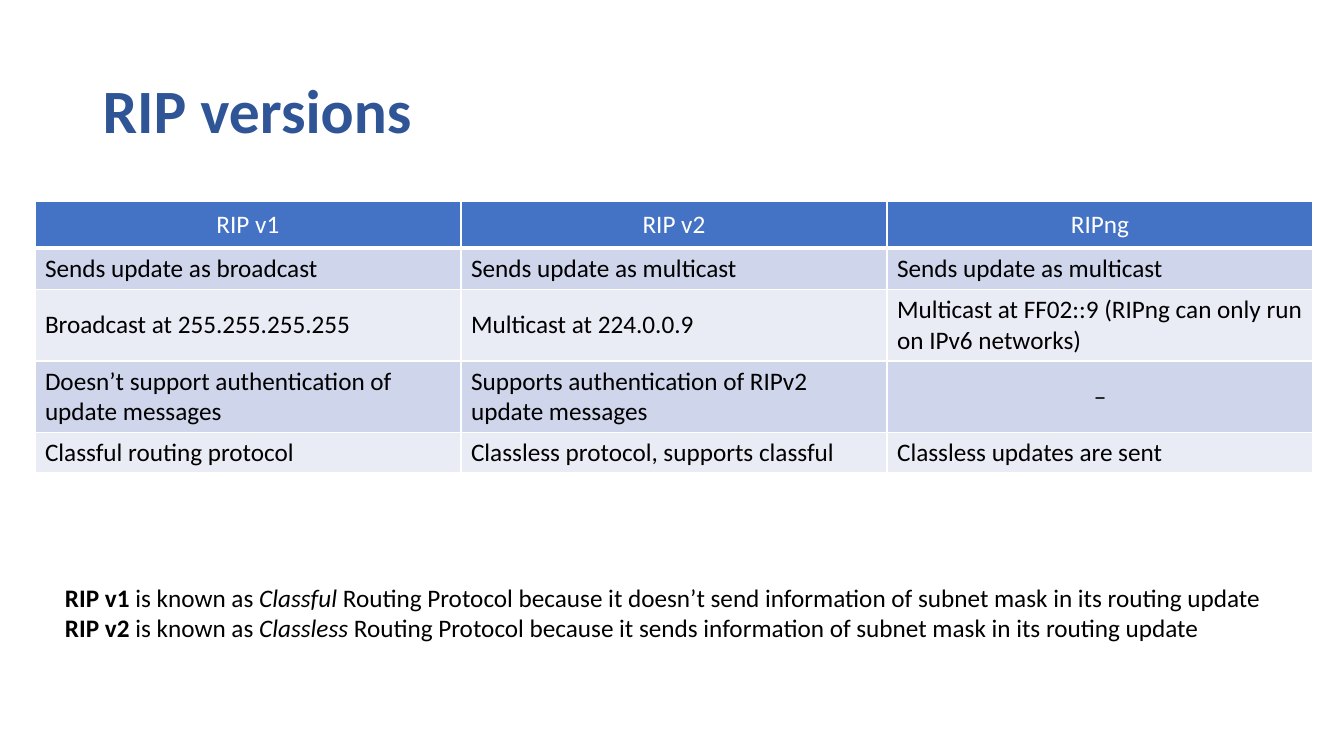
import pptx
import pptx.dml.color
import pptx.enum.text
import pptx.oxml.ns
import pptx.util
from lxml import etree

WIDTH, HEIGHT = 13.33, 7.5
FONT = "Calibri"
COLORS = {
    "title": "2F5597",
    "text": "000000",
    "white": "FFFFFF",
    "header": "4472C4",
    "band_dark": "CFD5EA",
    "band_light": "E9EBF5",
}
LEFT = pptx.enum.text.PP_ALIGN.LEFT
CENTER = pptx.enum.text.PP_ALIGN.CENTER
MIDDLE = pptx.enum.text.MSO_ANCHOR.MIDDLE

VERSIONS = [
    ["RIP v1", "RIP v2", "RIPng"],
    ["Sends update as broadcast", "Sends update as multicast", "Sends update as multicast"],
    ["Broadcast at 255.255.255.255", "Multicast at 224.0.0.9",
     "Multicast at FF02::9 (RIPng can only run on IPv6 networks)"],
    ["Doesn’t support authentication of update messages",
     "Supports authentication of RIPv2 update messages", "–"],
    ["Classful routing protocol", "Classless protocol, supports classful",
     "Classless updates are sent"],
]
ROW_HEIGHTS = [0.46, 0.41, 0.71, 0.71, 0.4]
NOTES = [
    ("RIP v1", "Classful", "doesn’t send"),
    ("RIP v2", "Classless", "sends"),
]


def share(x, y, width, height):
    """Turn shares of the slide's size into lengths."""
    return [pptx.util.Inches(part * whole)
            for part, whole in zip((x, y, width, height), (WIDTH, HEIGHT) * 2)]


def rgb(name):
    return pptx.dml.color.RGBColor.from_string(COLORS[name])


def add_text(paragraph, text, size=18, color="text", bold=False, italic=False):
    run = paragraph.add_run()
    run.text = text
    run.font.name = FONT
    run.font.size = pptx.util.Pt(size)
    run.font.bold = bold
    run.font.italic = italic
    run.font.color.rgb = rgb(color)


def add_text_frame(slide, box, wrap=True):
    frame = slide.shapes.add_textbox(*share(*box)).text_frame
    frame.word_wrap = wrap
    return frame


def add_borders(cell, bottom=1):
    properties = cell._tc.get_or_add_tcPr()
    for side, points in (("L", 1), ("R", 1), ("T", 1), ("B", bottom)):
        line = etree.SubElement(properties, pptx.oxml.ns.qn(f"a:ln{side}"),
                                w=str(pptx.util.Pt(points)))
        fill = etree.SubElement(line, pptx.oxml.ns.qn("a:solidFill"))
        etree.SubElement(fill, pptx.oxml.ns.qn("a:srgbClr"), val=COLORS["white"])


def fill_cell(cell, text, row):
    is_header = row == 0
    add_borders(cell, bottom=3 if is_header else 1)
    cell.fill.solid()
    band = "band_dark" if row % 2 else "band_light"
    cell.fill.fore_color.rgb = rgb("header" if is_header else band)
    cell.vertical_anchor = MIDDLE
    if is_header:
        inset = pptx.util.Inches(0.08)
        cell.margin_left = cell.margin_right = inset
        cell.margin_top = cell.margin_bottom = inset
    paragraph = cell.text_frame.paragraphs[0]
    paragraph.alignment = CENTER if is_header or text == "–" else LEFT
    add_text(paragraph, text, color="white" if is_header else "text")


def add_title(slide, text):
    frame = add_text_frame(slide, (0.069, 0.053, 0.862, 0.193))
    frame.vertical_anchor = MIDDLE
    frame.paragraphs[0].line_spacing = 0.9
    add_text(frame.paragraphs[0], text, size=44, color="title", bold=True)


def add_version_table(slide):
    box = share(0.026, 0.267, 0.951, sum(ROW_HEIGHTS) / HEIGHT)
    table = slide.shapes.add_table(len(VERSIONS), len(VERSIONS[0]), *box).table
    for row, (texts, height) in enumerate(zip(VERSIONS, ROW_HEIGHTS)):
        table.rows[row].height = pptx.util.Inches(height)
        for column, text in enumerate(texts):
            fill_cell(table.cell(row, column), text, row)


def add_notes(slide):
    frame = add_text_frame(slide, (0.041, 0.764, 0.92, 0.095), wrap=False)
    frame.auto_size = pptx.enum.text.MSO_AUTO_SIZE.SHAPE_TO_FIT_TEXT
    paragraph = frame.paragraphs[0]
    for index, (version, kind, action) in enumerate(NOTES):
        if index:
            paragraph.add_line_break()
        add_text(paragraph, version, bold=True)
        add_text(paragraph, " is known as ")
        add_text(paragraph, kind, italic=True)
        add_text(paragraph, f" Routing Protocol because it {action} information "
                            "of subnet mask in its routing update")


def main():
    presentation = pptx.Presentation()
    presentation.slide_width = pptx.util.Inches(WIDTH)
    presentation.slide_height = pptx.util.Inches(HEIGHT)
    slide = presentation.slides.add_slide(presentation.slide_layouts[6])
    # Heading
    add_title(slide, "RIP versions")
    # Comparison of the versions
    add_version_table(slide)
    # Explanation below the table
    add_notes(slide)
    presentation.save("out.pptx")


if __name__ == "__main__":
    main()
